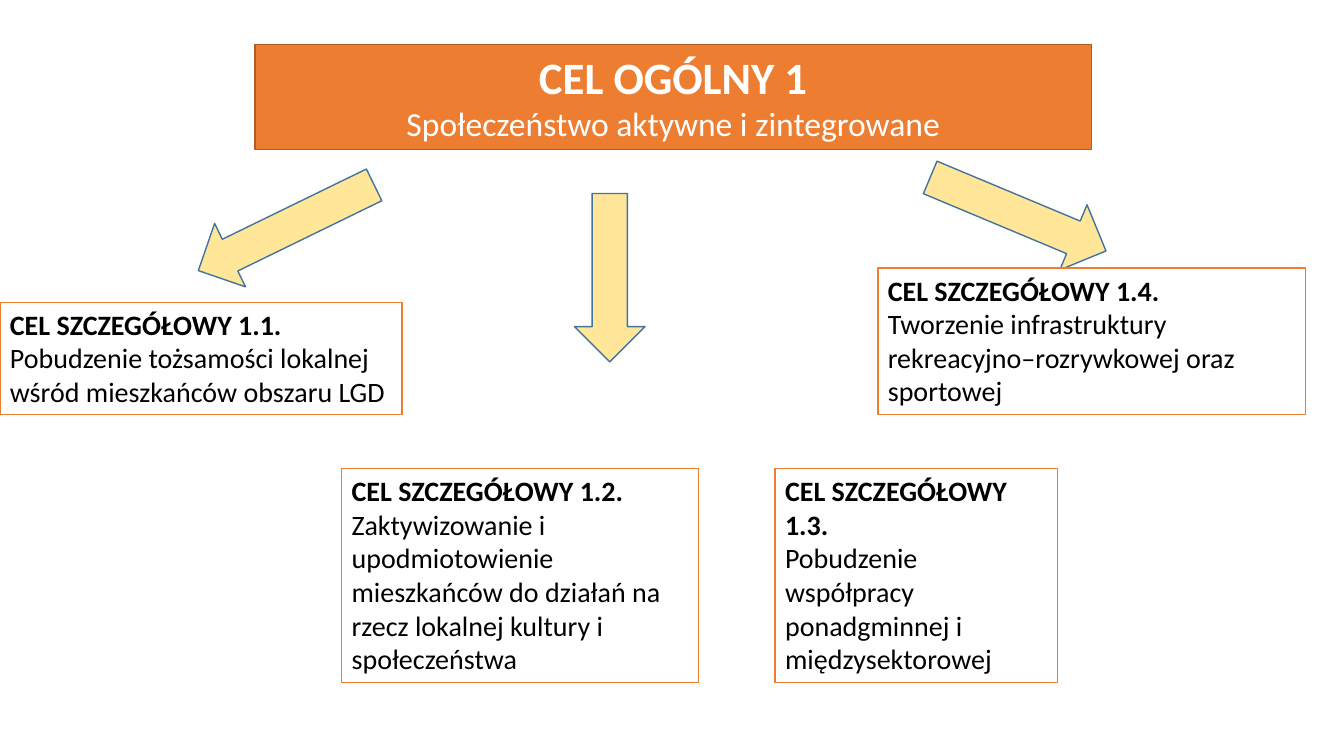
import dataclasses

import pptx
import pptx.dml.color
import pptx.enum.shapes
import pptx.enum.text
import pptx.util

FONT = "Calibri"
ORANGE = "ED7D31"
DARK_ORANGE = "AF5C24"
YELLOW = "FFE699"
BLUE = "43739E"
WHITE = "FFFFFF"
BLACK = "000000"
ARROW_WIDTH = 50.4
LOWER_ROW_TOP = 334.8
LOWER_ROW_HEIGHT = 152.64


@dataclasses.dataclass
class Goal:
    left: float
    top: float
    width: float
    height: float
    number: str
    text: str


@dataclasses.dataclass
class Arrow:
    left: float
    top: float
    length: float
    rotation: float


GOALS = [
    Goal(0, 216, 287.28, 79.92, "1.1.",
         "Pobudzenie tożsamości lokalnej wśród mieszkańców obszaru LGD"),
    Goal(244.08, LOWER_ROW_TOP, 254.88, LOWER_ROW_HEIGHT, "1.2.",
         "Zaktywizowanie i upodmiotowienie mieszkańców do działań na rzecz "
         "lokalnej kultury i społeczeństwa"),
    Goal(553.68, LOWER_ROW_TOP, 201.6, LOWER_ROW_HEIGHT, "1.3.",
         "Pobudzenie współpracy ponadgminnej i międzysektorowej"),
    Goal(627.12, 191.52, 305.28, 104.4, "1.4.",
         "Tworzenie infrastruktury rekreacyjno–rozrywkowej oraz sportowej"),
]

ARROWS = [
    Arrow(179.28, 92.88, 139.68, 64),
    Arrow(702, 84.96, 136.08, 292.7),
    Arrow(410.4, 138.24, 120.24, 0),
]


def rgb(color: str) -> pptx.dml.color.RGBColor:
    return pptx.dml.color.RGBColor.from_string(color)


def paint(sp, fill: str, line: str) -> None:
    sp.fill.solid()
    sp.fill.fore_color.rgb = rgb(fill)
    sp.line.color.rgb = rgb(line)
    sp.line.width = pptx.util.Pt(1)


def write(sp, heading: str, text: str, heading_size: float, text_size: float,
          color: str, align) -> None:
    tf = sp.text_frame
    tf.word_wrap = True
    tf.auto_size = pptx.enum.text.MSO_AUTO_SIZE.SHAPE_TO_FIT_TEXT
    tf.vertical_anchor = pptx.enum.text.MSO_ANCHOR.TOP
    lines = [(tf.paragraphs[0], heading, heading_size, True),
             (tf.add_paragraph(), text, text_size, False)]
    for p, content, size, bold in lines:
        p.alignment = align
        r = p.add_run()
        r.text = content
        r.font.name = FONT
        r.font.size = pptx.util.Pt(size)
        r.font.bold = bold
        r.font.color.rgb = rgb(color)


def add_shape(s, kind, left: float, top: float, width: float, height: float,
              fill: str, line: str):
    sp = s.shapes.add_shape(
        kind, *map(pptx.util.Pt, (left, top, width, height)))
    sp.shadow.inherit = False
    paint(sp, fill, line)
    return sp


def add_title(s) -> None:
    sp = s.shapes.title
    sp.left, sp.top, sp.width, sp.height = map(
        pptx.util.Pt, (182.16, 31.68, 597.6, 74.88))
    paint(sp, ORANGE, DARK_ORANGE)
    write(sp, "CEL OGÓLNY 1", "Społeczeństwo aktywne i zintegrowane",
          32, 24, WHITE, pptx.enum.text.PP_ALIGN.CENTER)


def add_arrow(s, arrow: Arrow) -> None:
    sp = add_shape(s, pptx.enum.shapes.MSO_SHAPE.DOWN_ARROW, arrow.left,
                   arrow.top, ARROW_WIDTH, arrow.length, YELLOW, BLUE)
    sp.rotation = arrow.rotation


def add_goal(s, goal: Goal) -> None:
    sp = add_shape(s, pptx.enum.shapes.MSO_SHAPE.RECTANGLE, goal.left,
                   goal.top, goal.width, goal.height, WHITE, ORANGE)
    write(sp, f"CEL SZCZEGÓŁOWY {goal.number}", goal.text,
          20, 20, BLACK, pptx.enum.text.PP_ALIGN.LEFT)


def main() -> None:
    prs = pptx.Presentation()
    prs.slide_width = pptx.util.Pt(960)
    prs.slide_height = pptx.util.Pt(540)
    s = prs.slides.add_slide(prs.slide_layouts.get_by_name("Title Only"))
    add_title(s)
    for arrow in ARROWS:
        add_arrow(s, arrow)
    for goal in GOALS:
        add_goal(s, goal)
    prs.save("out.pptx")


if __name__ == "__main__":
    main()
